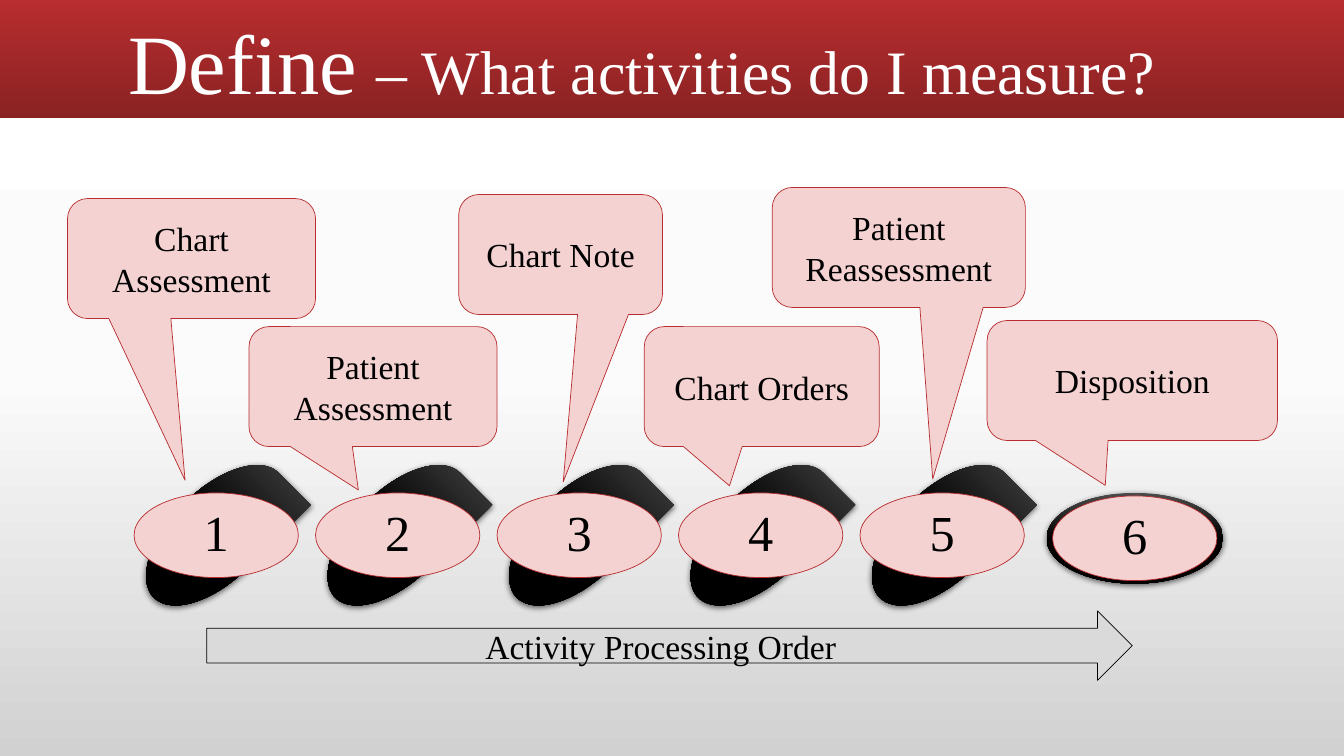
from copy import deepcopy

from lxml import etree
from pptx import Presentation
from pptx.dml.color import RGBColor
from pptx.enum.shapes import MSO_SHAPE
from pptx.enum.text import MSO_ANCHOR, MSO_AUTO_SIZE, PP_ALIGN
from pptx.oxml.ns import qn
from pptx.util import Inches, Pt

RECT = MSO_SHAPE.RECTANGLE
CALLOUT = MSO_SHAPE.ROUNDED_RECTANGULAR_CALLOUT
OVAL = MSO_SHAPE.OVAL
TEAR = MSO_SHAPE.TEAR
ARROW = MSO_SHAPE.RIGHT_ARROW
MIDDLE, BOTTOM = MSO_ANCHOR.MIDDLE, MSO_ANCHOR.BOTTOM
LEFT, CENTER = PP_ALIGN.LEFT, PP_ALIGN.CENTER
NO_FIT = MSO_AUTO_SIZE.NONE

WHITE = RGBColor(0xFF, 0xFF, 0xFF)
BLACK = RGBColor(0x00, 0x00, 0x00)
COAL = RGBColor(0x4B, 0x4B, 0x4B)
RED = RGBColor(0xB8, 0x2D, 0x2F)
WINE = RGBColor(0x8A, 0x22, 0x23)
PINK = RGBColor(0xF4, 0xD2, 0xD2)
SILVER = RGBColor(0xDA, 0xDA, 0xDA)
MIST = RGBColor(0xFB, 0xFB, 0xFB)
ASH = RGBColor(0xD1, 0xD1, 0xD1)

FONT = "Times New Roman"
TITLE = (("Define", 60.3), (" ", 54), ("– What activities do I measure?", 44.1))
# text, left, top, width, pointer x and y
CALLOUTS = (
    ("Chart Assessment", 0.67, 1.97, 2.46, -0.026, 1.848),
    ("Patient Assessment", 2.47, 3.24, 2.46, -0.059, 0.862),
    ("Chart Note", 4.55, 1.93, 2.02, 0.013, 1.895),
    ("Chart Orders", 6.39, 3.24, 2.33, -0.137, 0.827),
    ("Patient Reassessment", 7.66, 1.86, 2.51, 0.134, 1.931),
    ("Disposition", 9.79, 3.18, 2.88, -0.093, 0.874),
)
CALL_HIGH = 1.19
STEPS, STEP_LEFT, STEP_GAP = 6, 1.33, 1.8
STEP_WIDE, STEP_HIGH, STEP_TOP = 1.63, 0.84, 4.89
TEAR_WIDE, TEAR_HIGH = 0.9, 1.75


def apply(target, values):
    for name, value in values.items():
        setattr(target, name, value)


def shade(fill, owner, stops):
    """Fill from top to bottom with (position, colour) stops."""
    fill.gradient()
    fill.gradient_angle = 270
    group = next(owner.iter(qn("a:gsLst")))
    while len(group) < len(stops):
        group.append(deepcopy(group[-1]))
    for stop, (place, color) in zip(fill.gradient_stops, stops):
        stop.position = place
        stop.color.rgb = color


def add_form(slide, kind, box, fill=None, line=None):
    form = slide.shapes.add_shape(kind, *map(Inches, box))
    form.shadow.inherit = False
    if fill is not None:
        form.fill.solid()
        form.fill.fore_color.rgb = fill
    if line is None:
        form.line.fill.background()
    else:
        form.line.color.rgb = line
        form.line.width = Pt(0.5)
    return form


def add_run(para, text, size, color):
    run = para.add_run()
    run.text = text
    apply(run.font, {"name": FONT, "size": Pt(size)})
    run.font.color.rgb = color


def write(form, text, size, **frame):
    apply(form.text_frame, {"word_wrap": True, "vertical_anchor": MIDDLE, **frame})
    para = form.text_frame.paragraphs[0]
    para.alignment = CENTER
    add_run(para, text, size, BLACK)
    return para


def add_glow(form):
    """Give a form a soft black shadow below it."""
    effects = next(form._element.iter(qn("a:effectLst")))
    shadow = etree.SubElement(effects, qn("a:outerShdw"), {
        "blurRad": str(Pt(4.5)), "dist": str(Pt(1.5)), "dir": "5400000",
        "algn": "ctr", "rotWithShape": "0"})
    color = etree.SubElement(shadow, qn("a:srgbClr"), val=str(BLACK))
    etree.SubElement(color, qn("a:alpha"), val="63000")


def add_title(slide):
    band = add_form(slide, RECT, (0, 0, 13.33, 1.17))
    shade(band.fill, band._element, ((0, RED), (1, WINE)))
    slide.shapes._spTree.insert(2, band._element)
    title = slide.shapes.title
    apply(title, {"left": Inches(1.17), "top": Inches(0.11),
                  "width": Inches(11), "height": Inches(1.06)})
    apply(title.text_frame, {"word_wrap": True, "auto_size": NO_FIT,
                             "vertical_anchor": BOTTOM})
    para = title.text_frame.paragraphs[0]
    apply(para, {"alignment": LEFT, "line_spacing": 0.9})
    for text, size in TITLE:
        add_run(para, text, size, WHITE)


def add_callout(slide, text, left, top, width, tip_x, tip_y):
    form = add_form(slide, CALLOUT, (left, top, width, CALL_HIGH), PINK, RED)
    form.adjustments[0] = tip_x
    form.adjustments[1] = tip_y
    write(form, text, 24)


def add_step(slide, index):
    """Add a numbered oval on its dark backing; the last one has a ring."""
    left, top = STEP_LEFT + index * STEP_GAP, STEP_TOP
    if index == STEPS - 1:
        left, top = 10.44, 4.92
        back = add_form(slide, OVAL, (10.38, 4.89, 1.75, 0.9))
    else:
        back = add_form(slide, TEAR, (
            left + (STEP_WIDE - TEAR_WIDE) / 2,
            top + (STEP_HIGH - TEAR_HIGH) / 2, TEAR_WIDE, TEAR_HIGH))
        back.rotation = 45
    shade(back.fill, back._element, ((0, COAL), (0.5, BLACK), (1, BLACK)))
    add_glow(back)
    oval = add_form(slide, OVAL, (left, top, STEP_WIDE, STEP_HIGH), PINK, RED)
    sides = ("left", "top", "right", "bottom")
    para = write(oval, str(index + 1), 36,
                 **{f"margin_{side}": Inches(0.16) for side in sides})
    para.line_spacing = 0.9


def main():
    deck = Presentation()
    apply(deck, {"slide_width": Inches(13.33), "slide_height": Inches(7.5)})
    slide = deck.slides.add_slide(deck.slide_layouts[5])
    shade(slide.background.fill, slide._element,
          ((0, WHITE), (0.5, MIST), (1, ASH)))
    add_title(slide)
    for callout in CALLOUTS:
        add_callout(slide, *callout)
    for index in reversed(range(STEPS)):
        add_step(slide, index)
    arrow = add_form(slide, ARROW, (2.05, 6.06, 9.18, 0.69), SILVER, BLACK)
    write(arrow, "Activity Processing Order", 24)
    deck.save("out.pptx")


if __name__ == "__main__":
    main()
